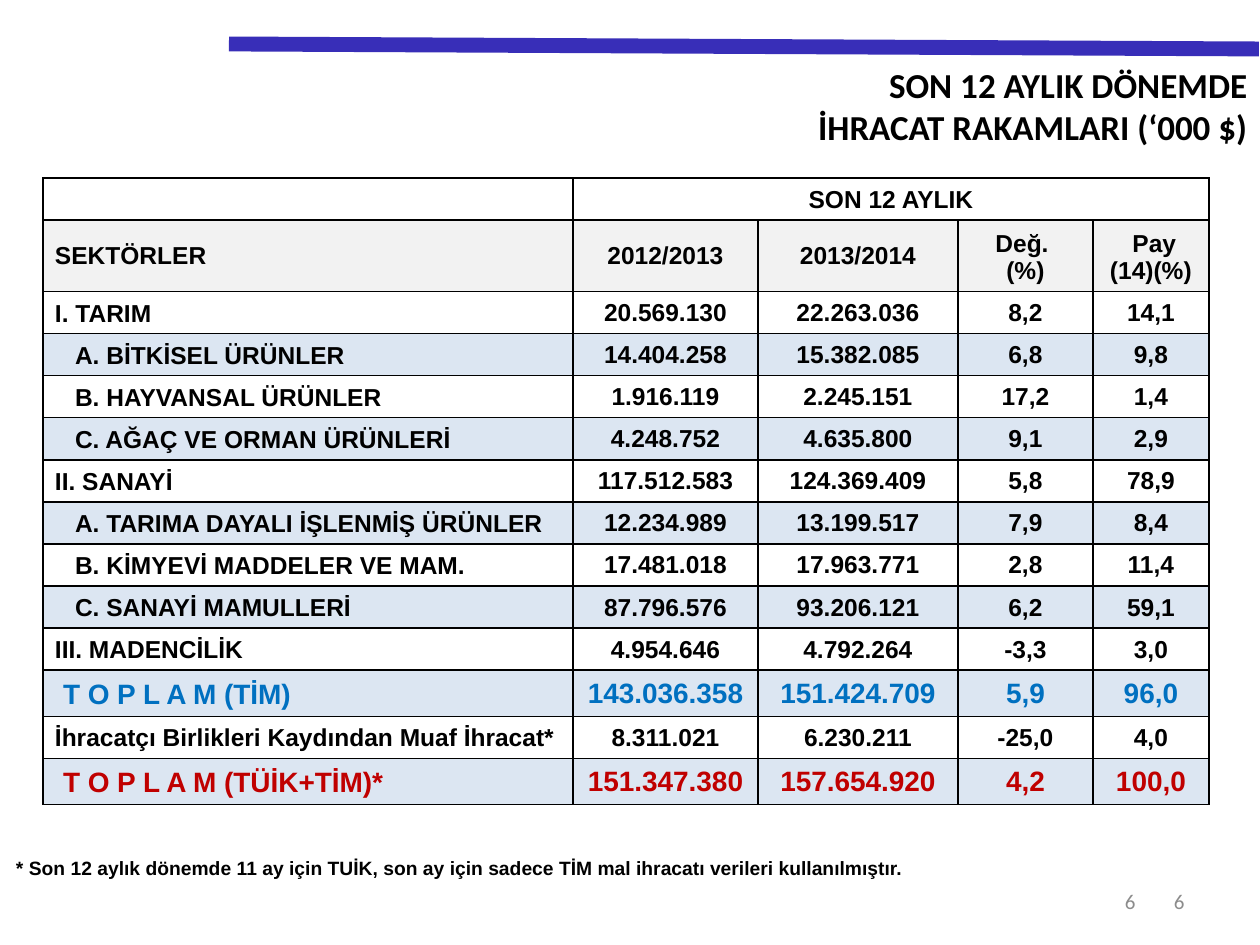
from lxml.etree import SubElement
from pptx import Presentation
from pptx.dml.color import RGBColor
from pptx.enum.shapes import MSO_CONNECTOR
from pptx.enum.text import MSO_ANCHOR, PP_ALIGN
from pptx.oxml.ns import qn
from pptx.util import Emu, Pt

BLACK = RGBColor(0x00, 0x00, 0x00)
GREY = RGBColor(0x8C, 0x8C, 0x8C)
HEADER = RGBColor(0xF2, 0xF2, 0xF2)
BAND = RGBColor(0xDC, 0xE6, 0xF2)
BLUE = RGBColor(0x00, 0x70, 0xC0)
RED = RGBColor(0xC0, 0x00, 0x00)
BAR = RGBColor(0x38, 0x2E, 0xB8)


def px(n):
    return Emu(round(n * 914400 / 126))


def write(tf, lines, size, color, font, bold, align):
    for i, line in enumerate(lines):
        p = tf.paragraphs[0] if i == 0 else tf.add_paragraph()
        p.alignment = align
        if not line:
            SubElement(p._p, qn("a:endParaRPr"), sz=str(size * 100))
            continue
        r = p.add_run()
        r.text = line
        r.font.size = Pt(size)
        r.font.name = font
        r.font.bold = bold
        r.font.color.rgb = color


prs = Presentation()
prs.slide_width = px(1260)
prs.slide_height = px(945)
s = prs.slides.add_slide(prs.slide_layouts[6])

line = s.shapes.add_connector(MSO_CONNECTOR.STRAIGHT, px(229), px(44), px(1259), px(49))
line.line.color.rgb = BAR
line.line.width = Pt(8.5)
SubElement(line._element.spPr, qn("a:effectLst"))

TITLE = ["SON 12 AYLIK DÖNEMDE", "İHRACAT RAKAMLARI (‘000 $)"]
for x, y, w, h, lines, size, color, bold, anchor in [
    (903, 876, 294, 50, ["6"], 12, GREY, False, MSO_ANCHOR.MIDDLE),
    (883, 876, 265, 50, ["6"], 12, GREY, False, MSO_ANCHOR.MIDDLE),
    (134, 57, 1126, 97, TITLE, 20, BLACK, True, MSO_ANCHOR.TOP),
]:
    tf = s.shapes.add_textbox(px(x), px(y), px(w), px(h)).text_frame
    tf.word_wrap = True
    tf.vertical_anchor = anchor
    write(tf, lines, size, color, "Calibri", bold, PP_ALIGN.RIGHT)

rows = [
    ["", "SON 12 AYLIK", "", "", ""],
    ["SEKTÖRLER", "2012/2013", "2013/2014", "Değ. \n(%)", " Pay\n(14)(%)"],
    ["I. TARIM", "20.569.130", "22.263.036", "8,2", "14,1"],
    ["A. BİTKİSEL ÜRÜNLER", "14.404.258", "15.382.085", "6,8", "9,8"],
    ["B. HAYVANSAL ÜRÜNLER", "1.916.119", "2.245.151", "17,2", "1,4"],
    ["C. AĞAÇ VE ORMAN ÜRÜNLERİ", "4.248.752", "4.635.800", "9,1", "2,9"],
    ["II. SANAYİ", "117.512.583", "124.369.409", "5,8", "78,9"],
    ["A. TARIMA DAYALI İŞLENMİŞ ÜRÜNLER", "12.234.989", "13.199.517", "7,9", "8,4"],
    ["B. KİMYEVİ MADDELER VE MAM.", "17.481.018", "17.963.771", "2,8", "11,4"],
    ["C. SANAYİ MAMULLERİ", "87.796.576", "93.206.121", "6,2", "59,1"],
    ["III. MADENCİLİK", "4.954.646", "4.792.264", "-3,3", "3,0"],
    ["T O P L A M (TİM)", "143.036.358", "151.424.709", "5,9", "96,0"],
    ["İhracatçı Birlikleri Kaydından Muaf İhracat*", "8.311.021", "6.230.211", "-25,0", "4,0"],
    ["T O P L A M (TÜİK+TİM)*", "151.347.380", "157.654.920", "4,2", "100,0"],
]
widths = [530, 185, 200, 135, 116]
totals = {11: BLUE, 13: RED}

frame = s.shapes.add_table(len(rows), len(widths), px(43), px(178), px(sum(widths)), px(626))
table = frame.table
table.first_row = False
table.horz_banding = False
for column, width in zip(table.columns, widths):
    column.width = px(width)

for i, values in enumerate(rows):
    table.rows[i].height = px(71 if i == 1 else 46 if i in totals else 42)
    for j, value in enumerate(values):
        cell = table.cell(i, j)
        if i > 1 and j > 0:
            cell.margin_left = cell.margin_right = cell.margin_top = px(1)
            cell.margin_bottom = 0
        elif j == 0:
            indented = value[:3] in ("A. ", "B. ", "C. ")
            cell.margin_left = px(32 if indented else 20 if i in totals else 12)
        middle = i == 1 and j < 3 or i > 1 and j > 0
        cell.vertical_anchor = MSO_ANCHOR.MIDDLE if middle else MSO_ANCHOR.BOTTOM
        for side in ("L", "R", "T", "B"):
            ln = SubElement(cell._tc.get_or_add_tcPr(), qn("a:ln" + side), w="12700")
            SubElement(SubElement(ln, qn("a:solidFill")), qn("a:srgbClr"), val=str(BLACK))
        if i == 1 or i > 1 and i % 2:
            cell.fill.solid()
            cell.fill.fore_color.rgb = HEADER if i == 1 else BAND
        else:
            cell.fill.background()
        write(cell.text_frame, value.split("\n"), 16 if i in totals else 14,
              totals.get(i, BLACK), "Arial", True, PP_ALIGN.CENTER if j else PP_ALIGN.LEFT)
table.cell(0, 1).merge(table.cell(0, 4))

NOTE = ("* Son 12 aylık dönemde 11 ay için TUİK, son ay için sadece TİM "
        "mal ihracatı verileri kullanılmıştır.")
note = s.shapes.add_table(2, 1, px(15), px(849), px(932), px(78)).table
note.first_row = False
note.horz_banding = False
for i, text in enumerate([NOTE, ""]):
    cell = note.cell(i, 0)
    cell.margin_left = cell.margin_right = cell.margin_top = px(1)
    cell.margin_bottom = 0
    cell.vertical_anchor = MSO_ANCHOR.MIDDLE
    cell.fill.background()
    write(cell.text_frame, [text], 11, BLACK, "Arial", True, PP_ALIGN.LEFT)

prs.save("out.pptx")
